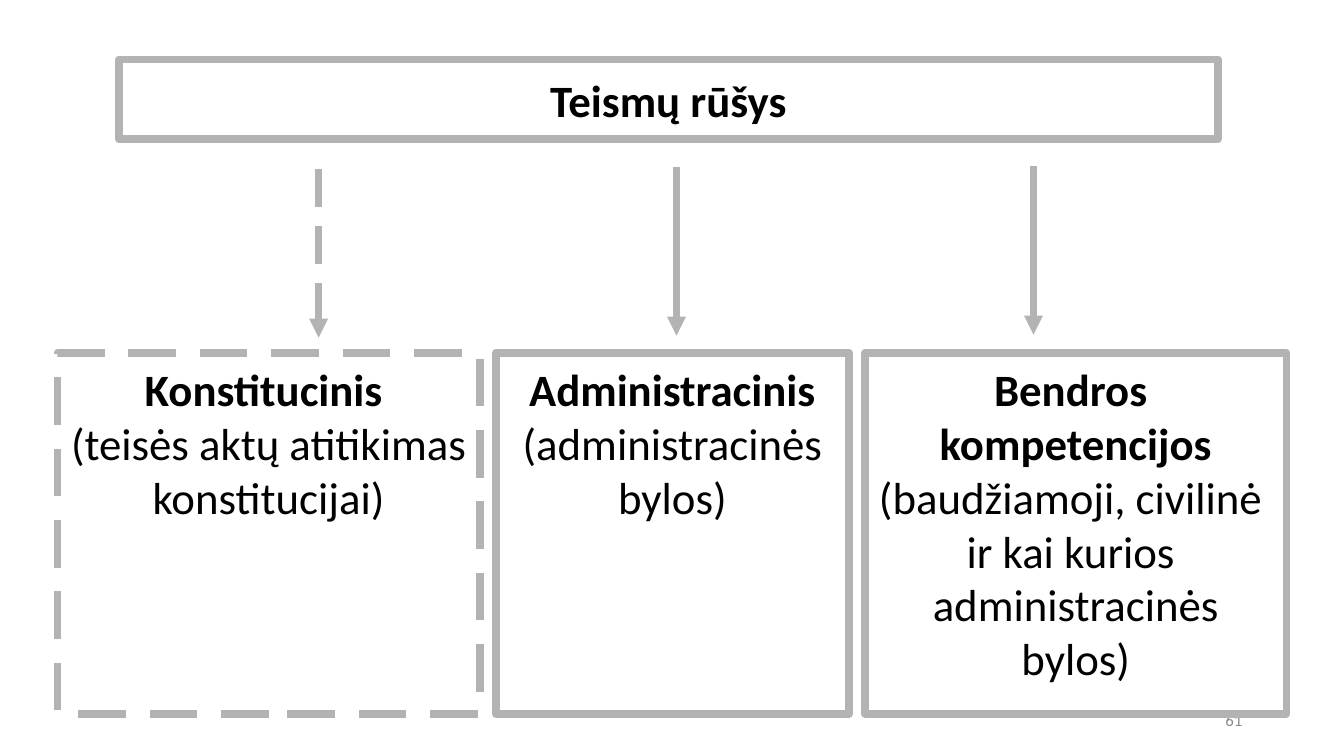
"""Builds a slide showing the kinds of courts as a title box with three branches."""
from lxml import etree
from pptx import Presentation
from pptx.dml.color import RGBColor
from pptx.enum.shapes import MSO_CONNECTOR, MSO_SHAPE
from pptx.enum.text import MSO_ANCHOR, PP_ALIGN
from pptx.oxml.ns import qn
from pptx.util import Inches, Pt

RECTANGLE = MSO_SHAPE.RECTANGLE
STRAIGHT = MSO_CONNECTOR.STRAIGHT
TOP, MIDDLE = MSO_ANCHOR.TOP, MSO_ANCHOR.MIDDLE
CENTER, RIGHT = PP_ALIGN.CENTER, PP_ALIGN.RIGHT

COLORS = {"line": "B3B3B3", "text": "000000", "number": "8B8B8B"}
FONT = "Calibri"
BOX_TOP, BOX_HEIGHT = 3.5, 3.58
ARROW_LENGTH = 1.67

COURTS = [
    (0.57, 4.19, 3.16, 1.68, True, ["Konstitucinis "],
     ["(teisės aktų atitikimas", "konstitucijai)"]),
    (4.92, 3.5, 6.71, 1.66, False, ["Administracinis"],
     ["(administracinės", "bylos)"]),
    (8.58, 4.18, 10.25, 1.65, False, ["Bendros ", "kompetencijos"],
     ["(baudžiamoji, civilinė ", "ir kai kurios ", "administracinės", "bylos)"]),
]


def write_lines(frame, lines, size, color, align):
    for index, (text, bold) in enumerate(lines):
        paragraph = frame.paragraphs[0] if index == 0 else frame.add_paragraph()
        paragraph.alignment = align
        run = paragraph.add_run()
        run.text = text
        run.font.name = FONT
        run.font.size = Pt(size)
        run.font.bold = bold
        run.font.color.rgb = RGBColor.from_string(COLORS[color])


def style_line(line, width, dashed):
    line.color.rgb = RGBColor.from_string(COLORS["line"])
    line.width = Pt(width)
    outline = line._get_or_add_ln()
    if dashed:
        dashes = etree.SubElement(outline, qn("a:custDash"))
        etree.SubElement(dashes, qn("a:ds"), d="600000", sp="300000")
    return outline


prs = Presentation()
prs.slide_width, prs.slide_height = Inches(13.33), Inches(7.5)
slide = prs.slides.add_slide(prs.slide_layouts[6])
shapes = slide.shapes

page_number = shapes.add_textbox(Inches(9.42), Inches(6.95), Inches(3), Inches(0.39))
page_number.text_frame.word_wrap = True
page_number.text_frame.vertical_anchor = MIDDLE
write_lines(page_number.text_frame, [("61", False)], 12, "number", RIGHT)

boxes = [(1.18, 0.59, 10.9, 0.79, False, MIDDLE, [("Teismų rūšys", True)])]
for left, width, arrow_x, arrow_top, dashed, names, cases in COURTS:
    lines = [(name, True) for name in names] + [(case, False) for case in cases]
    boxes.append((left, BOX_TOP, width, BOX_HEIGHT, dashed, TOP, lines))

for left, top, width, height, dashed, anchor, lines in boxes:
    box = shapes.add_shape(RECTANGLE, Inches(left), Inches(top), Inches(width), Inches(height))
    box.shadow.inherit = False
    box.fill.background()
    style_line(box.line, 5.67, dashed)
    frame = box.text_frame
    frame.word_wrap = False
    frame.vertical_anchor = anchor
    frame.margin_left = frame.margin_right = Inches(0.14)
    frame.margin_top = frame.margin_bottom = Inches(0.09)
    write_lines(frame, lines, 32, "text", CENTER)

for left, width, arrow_x, arrow_top, dashed, names, cases in COURTS:
    arrow = shapes.add_connector(STRAIGHT, Inches(arrow_x), Inches(arrow_top),
                                 Inches(arrow_x), Inches(arrow_top + ARROW_LENGTH))
    outline = style_line(arrow.line, 4.5, dashed)
    etree.SubElement(outline, qn("a:tailEnd"), type="triangle")
    etree.SubElement(arrow._element.spPr, qn("a:effectLst"))

prs.save("out.pptx")
